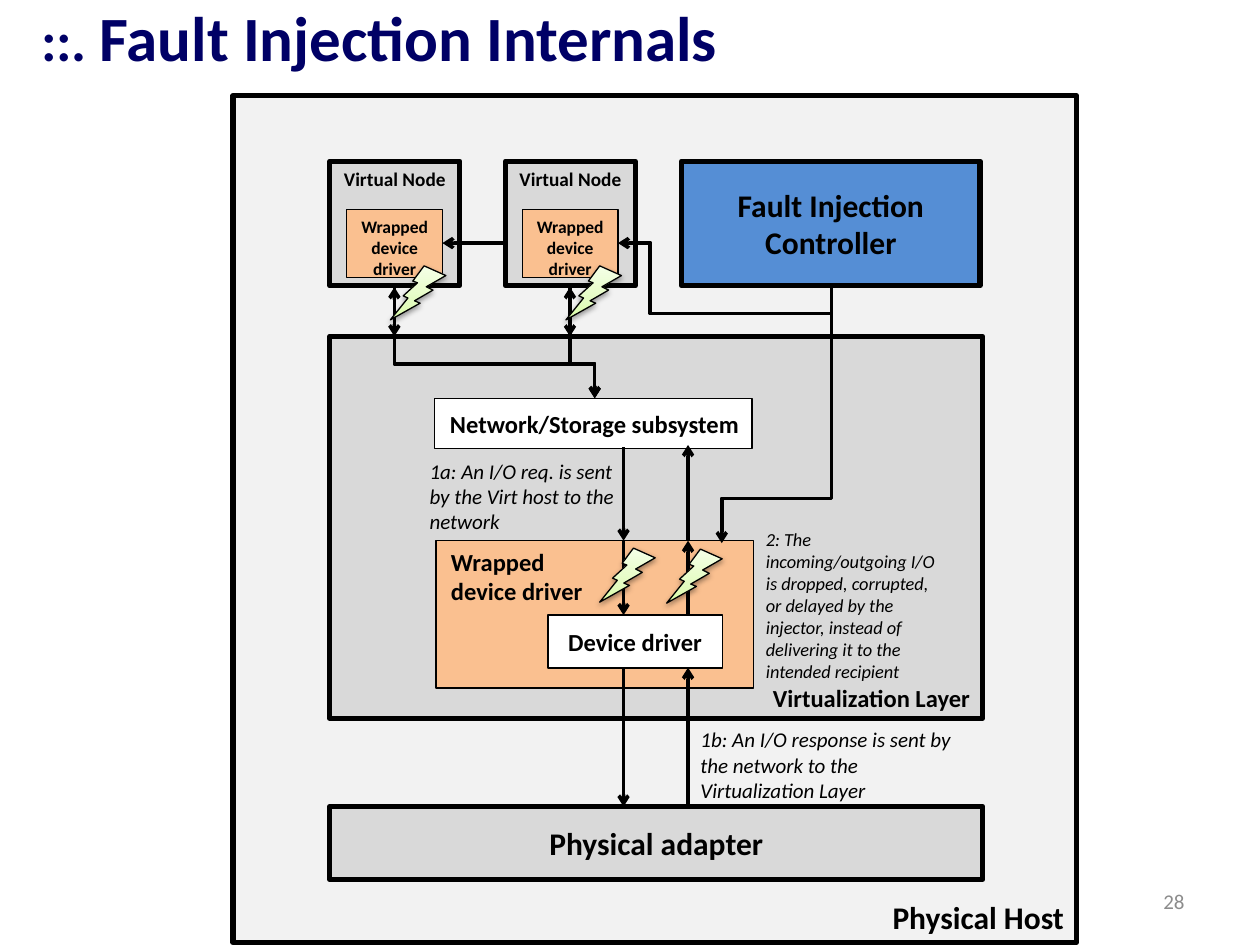
from dataclasses import dataclass

from pptx import Presentation
from pptx.dml.color import RGBColor
from pptx.enum.shapes import MSO_CONNECTOR, MSO_SHAPE
from pptx.enum.text import MSO_ANCHOR, PP_ALIGN
from pptx.oxml import parse_xml
from pptx.oxml.ns import nsdecls, qn
from pptx.util import Cm, Pt
from lxml.etree import SubElement

COLORS = {
    "black": "000000",
    "white": "FFFFFF",
    "host": "F2F2F2",
    "layer": "D9D9D9",
    "driver": "FAC090",
    "controller": "558ED5",
    "title": "000066",
    "number": "8C8C8C",
}
BOLT_STOPS = {0: "DAFDA7", 35: "E4FCC2", 100: "F5FFE7"}
FONT = "Calibri"
TOP, MIDDLE, BOTTOM = MSO_ANCHOR.TOP, MSO_ANCHOR.MIDDLE, MSO_ANCHOR.BOTTOM
LEFT, CENTER, RIGHT = PP_ALIGN.LEFT, PP_ALIGN.CENTER, PP_ALIGN.RIGHT


@dataclass
class Box:
    left: float
    top: float
    width: float
    height: float
    text: str
    size: float
    fill: str
    border: float = 3
    align: PP_ALIGN = CENTER
    anchor: MSO_ANCHOR = MIDDLE
    inset_left: float = 0.25
    inset_right: float = 0.25


@dataclass
class Label:
    left: float
    top: float
    width: float
    height: float
    text: str
    size: float
    color: str = "black"
    italic: bool = True
    align: PP_ALIGN = LEFT
    anchor: MSO_ANCHOR = TOP


@dataclass
class Arrow:
    x: float
    start: float
    end: float
    double: bool = False


@dataclass
class Elbow:
    start_x: float
    start_y: float
    end_x: float
    end_y: float
    adjustments: tuple[float, ...]


def color(name: str) -> RGBColor:
    return RGBColor.from_string(COLORS[name])


def write_text(frame, text, size, name="black", bold=False, italic=False,
               align=LEFT, anchor=TOP) -> None:
    frame.word_wrap = True
    frame.vertical_anchor = anchor
    frame.text = text
    for paragraph in frame.paragraphs:
        paragraph.alignment = align
        font = paragraph.font
        font.name, font.size = FONT, Pt(size)
        font.bold, font.italic = bold, italic
        font.color.rgb = color(name)


def draw_box(slide, box: Box) -> None:
    shape = slide.shapes.add_shape(MSO_SHAPE.RECTANGLE, Cm(box.left), Cm(box.top),
                                   Cm(box.width), Cm(box.height))
    shape.shadow.inherit = False
    shape.fill.solid()
    shape.fill.fore_color.rgb = color(box.fill)
    shape.line.color.rgb = color("black")
    shape.line.width = Pt(box.border)
    frame = shape.text_frame
    frame.margin_left, frame.margin_right = Cm(box.inset_left), Cm(box.inset_right)
    write_text(frame, box.text, box.size, bold=True, align=box.align, anchor=box.anchor)


def draw_label(slide, label: Label) -> None:
    shape = slide.shapes.add_textbox(Cm(label.left), Cm(label.top),
                                     Cm(label.width), Cm(label.height))
    write_text(shape.text_frame, label.text, label.size, label.color,
               italic=label.italic, align=label.align, anchor=label.anchor)


def draw_bolt(slide, left: float, top: float) -> None:
    shape = slide.shapes.add_shape(MSO_SHAPE.LIGHTNING_BOLT, Cm(left), Cm(top),
                                   Cm(1.12), Cm(1.09))
    properties = shape._element.spPr
    properties.find(qn("a:xfrm")).set("flipH", "1")
    stops = "".join(f'<a:gs pos="{position * 1000}"><a:srgbClr val="{value}"/></a:gs>'
                    for position, value in BOLT_STOPS.items())
    properties.append(parse_xml(
        f'<a:gradFill {nsdecls("a")} rotWithShape="1"><a:gsLst>{stops}</a:gsLst>'
        '<a:lin ang="16200000" scaled="1"/></a:gradFill>'))
    shape.line.color.rgb = color("black")
    shape.line.width = Pt(0.75)
    properties.append(parse_xml(
        f'<a:effectLst {nsdecls("a")}><a:outerShdw blurRad="{Pt(3.1)}" dist="{Pt(1.6)}" '
        'dir="5400000" rotWithShape="0"><a:srgbClr val="000000"><a:alpha val="38000"/>'
        '</a:srgbClr></a:outerShdw></a:effectLst>'))


def style_connector(connector, double: bool = False) -> None:
    connector.line.color.rgb = color("black")
    connector.line.width = Pt(2)
    line = connector.line._get_or_add_ln()
    if double:
        SubElement(line, qn("a:headEnd")).set("type", "arrow")
    SubElement(line, qn("a:tailEnd")).set("type", "arrow")
    SubElement(connector._element.spPr, qn("a:effectLst"))


def draw_arrow(slide, arrow: Arrow) -> None:
    connector = slide.shapes.add_connector(MSO_CONNECTOR.STRAIGHT, Cm(arrow.x), Cm(arrow.start),
                                           Cm(arrow.x), Cm(arrow.end))
    style_connector(connector, arrow.double)


def draw_elbow(slide, elbow: Elbow) -> None:
    across, down = elbow.end_x - elbow.start_x, elbow.end_y - elbow.start_y
    width, height = abs(down), abs(across)
    left = (elbow.start_x + elbow.end_x - width) / 2
    top = (elbow.start_y + elbow.end_y - height) / 2
    connector = slide.shapes.add_connector(MSO_CONNECTOR.ELBOW, Cm(left), Cm(top),
                                           Cm(left + width), Cm(top + height))
    properties = connector._element.spPr
    transform = properties.find(qn("a:xfrm"))
    transform.set("rot", str((270 if across > 0 else 90) * 60000))
    if across > 0 or down < 0:
        transform.set("flipH", "1")
    geometry = properties.find(qn("a:prstGeom"))
    geometry.set("prst", f"bentConnector{len(elbow.adjustments) + 2}")
    guides = geometry.find(qn("a:avLst"))
    for number, value in enumerate(elbow.adjustments, 1):
        guide = SubElement(guides, qn("a:gd"))
        guide.set("name", f"adj{number}")
        guide.set("fmla", f"val {round(value * 100000)}")
    style_connector(connector)


def draw_title(slide) -> None:
    shape = slide.shapes.add_textbox(Cm(0.58), Cm(-0.08), Cm(23.52), Cm(1.63))
    frame = shape.text_frame
    write_text(frame, "", 36, "title", bold=True, anchor=MIDDLE)
    for text, size in (("::. ", 32), ("Fault Injection Internals", 36)):
        run = frame.paragraphs[0].add_run()
        run.text = text
        run.font.size = Pt(size)


BOXES = [
    Box(4.7, 1.93, 17, 17.07, "Physical Host", 18, "host", align=RIGHT, anchor=BOTTOM),
    Box(6.65, 6.78, 13.16, 7.7, "Virtualization Layer", 14, "layer", align=RIGHT, anchor=BOTTOM),
    Box(8.79, 10.9, 6.4, 2.97, "Wrapped\ndevice driver", 14, "driver", 0.75, LEFT, TOP, 0.3),
    Box(11.05, 12.4, 3.51, 1.07, "Device driver", 14, "white", 0.75),
    Box(8.76, 8.03, 6.4, 1.02, "Network/Storage subsystem", 14, "white", 0.75, inset_left=0.3),
    Box(6.65, 16.26, 13.16, 1.47, "Physical adapter", 18, "layer"),
    Box(13.74, 3.25, 6.02, 2.51, "Fault Injection\nController", 18, "controller"),
]
REQUEST_X, RESPONSE_X, CONTROL_X = 12.57, 13.87, 16.76
NODE_BOTTOM = 5.79
ARROWS = [
    Arrow(REQUEST_X, 9.02, 10.9),
    Arrow(REQUEST_X, 10.9, 12.4),
    Arrow(REQUEST_X, 13.46, 16.26),
    Arrow(RESPONSE_X, 16.26, 13.46),
    Arrow(RESPONSE_X, 12.4, 10.9),
    Arrow(RESPONSE_X, 10.9, 8.97),
]
LABELS = [
    Label(8.41, 9.12, 4.52, 1.8, "1a: An I/O req. is sent by the Virt host to the network", 12),
    Label(13.87, 14.53, 5.82, 1.8,
          "1b: An I/O response is sent by the network to the Virtualization Layer", 12),
    Label(15.19, 10.52, 4.14, 3.4,
          "2: The incoming/outgoing I/O is dropped, corrupted, or delayed by the injector, "
          "instead of delivering it to the intended recipient", 10.5),
    Label(18.21, 17.65, 5.92, 1.02, "28", 12, "number", False, RIGHT, MIDDLE),
]


def draw_node(slide, offset: float, control_bend: float) -> None:
    draw_box(slide, Box(6.65 + offset, 3.25, 2.62, 2.51, "Virtual Node", 11, "layer", anchor=TOP))
    node_x = 7.95 + offset
    draw_arrow(slide, Arrow(node_x, NODE_BOTTOM, 6.78, double=True))
    draw_elbow(slide, Elbow(node_x, NODE_BOTTOM, 11.99, 8.03, (0.69,)))
    draw_box(slide, Box(6.99 + offset, 4.22, 1.93, 1.37, "Wrapped device driver", 10, "driver",
                        0.75, anchor=TOP, inset_left=0.1, inset_right=0.1))
    draw_bolt(slide, 7.87 + offset, 5.36)
    draw_elbow(slide, Elbow(CONTROL_X, NODE_BOTTOM, 8.92 + offset, 4.9, (-0.595, control_bend)))


def main() -> None:
    presentation = Presentation()
    presentation.slide_width, presentation.slide_height = Cm(25.4), Cm(19.05)
    slide = presentation.slides.add_slide(presentation.slide_layouts[6])
    for box in BOXES:
        draw_box(slide, box)
    for arrow in ARROWS:
        draw_arrow(slide, arrow)
    for label in LABELS:
        draw_label(slide, label)
    for left, top in ((13.44, 11.07), (12.09, 11.05)):
        draw_bolt(slide, left, top)
    draw_elbow(slide, Elbow(CONTROL_X, NODE_BOTTOM, 14.55, 10.95, (0.825,)))
    for offset, control_bend in ((0, 0.465), (3.54, 0.851)):
        draw_node(slide, offset, control_bend)
    draw_title(slide)
    presentation.save("out.pptx")


if __name__ == "__main__":
    main()
